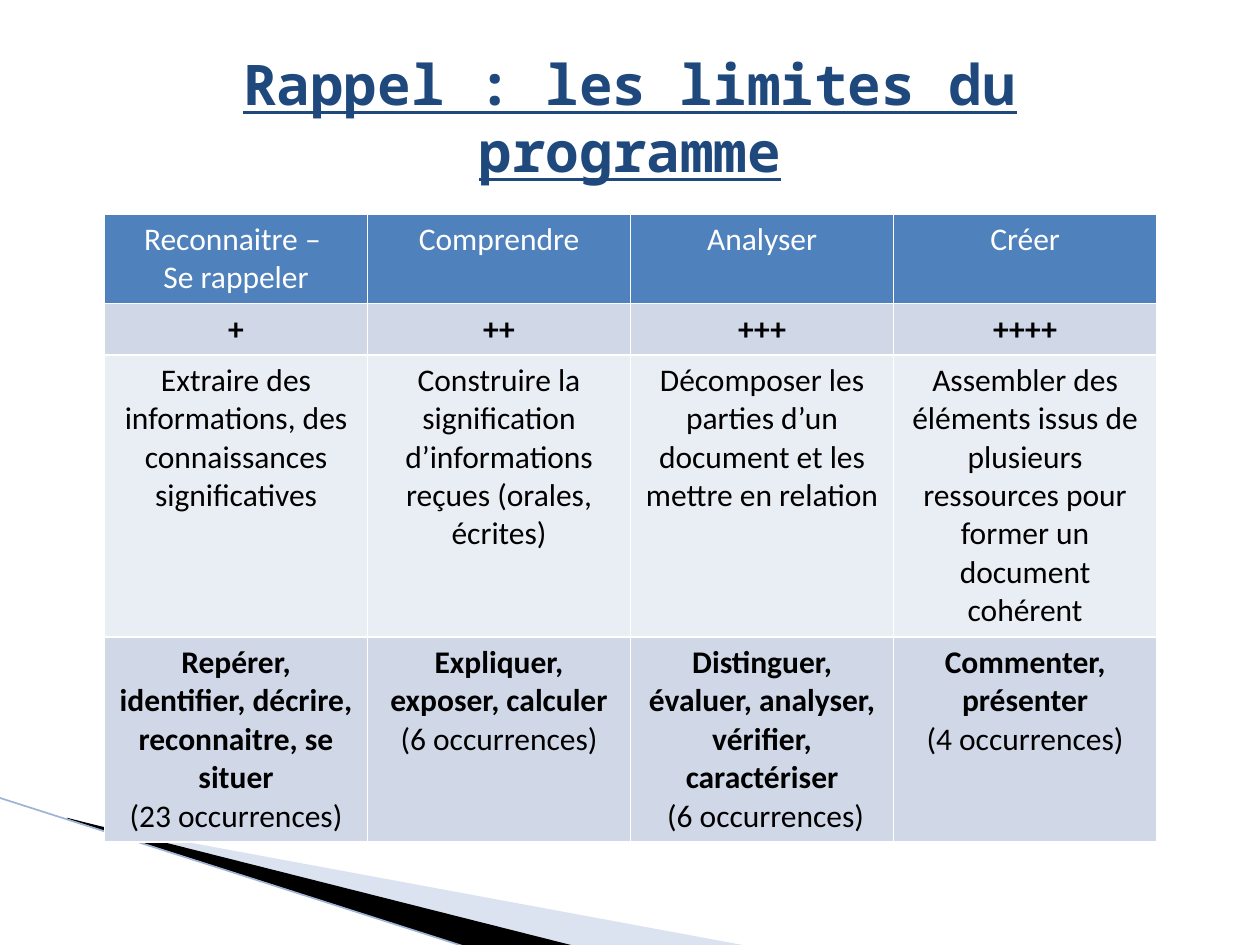
from lxml import etree
from pptx import Presentation
from pptx.dml.color import RGBColor
from pptx.enum import shapes, text
from pptx.oxml.ns import qn
from pptx.util import Inches, Pt

NAVY = RGBColor(0x1F, 0x49, 0x7D)
HEADER_BLUE = RGBColor(0x4F, 0x81, 0xBD)
BAND_DARK = RGBColor(0xD0, 0xD8, 0xE8)
BAND_LIGHT = RGBColor(0xE9, 0xED, 0xF4)
PALE_BLUE = RGBColor(0xA7, 0xB9, 0xDB)
LINE_BLUE = RGBColor(0x9E, 0xB3, 0xD6)
BLACK = RGBColor(0, 0, 0)
WHITE = RGBColor(0xFF, 0xFF, 0xFF)

deck = Presentation()
deck.slide_width, deck.slide_height = Inches(10), Inches(7.5)
page = deck.slides.add_slide(deck.slide_layouts[5])


def add_wedge(points, color):
    corners = [(Inches(x), Inches(y)) for x, y in points]
    builder = page.shapes.build_freeform(*corners[0], scale=1.0)
    builder.add_line_segments(corners[1:], close=True)
    wedge = builder.convert_to_shape()
    wedge.shadow.inherit = False
    wedge.fill.solid()
    wedge.fill.fore_color.rgb = color
    wedge.line.fill.background()
    return wedge


# Corner decoration
pale_wedge = add_wedge([(0.55, 6.51), (5.95, 7.51), (4.56, 7.51), (0.55, 6.5)], PALE_BLUE)
pale_color = pale_wedge.fill._xPr.find(qn("a:solidFill"))[0]
etree.SubElement(pale_color, qn("a:alpha"), val="40000")
add_wedge([(0.53, 6.49), (4.57, 7.51), (3.72, 7.52), (0.54, 6.5)], BLACK)

edge = page.shapes.add_connector(
    shapes.MSO_CONNECTOR.STRAIGHT,
    Inches(-0.01), Inches(6.33), Inches(3.71), Inches(7.52))
edge.line.color.rgb = LINE_BLUE
edge.line.width = Pt(0.95)
etree.SubElement(edge._element.spPr, qn("a:effectLst"))

# Title
title = page.shapes.title
title.left, title.top = Inches(0.5), Inches(0.3)
title.width, title.height = Inches(9), Inches(1.25)
title.text_frame.vertical_anchor = text.MSO_ANCHOR.MIDDLE
para = title.text_frame.paragraphs[0]
para.alignment = text.PP_ALIGN.CENTER
span = para.add_run()
span.text = "Rappel : les limites du programme"
span.font.name = "Noto Sans Mono"
span.font.size = Pt(32)
span.font.bold = span.font.underline = True
span.font.color.rgb = NAVY

# Each row: height, fill, text colour, bold flag of each paragraph, cells
ROWS = [
    (0.71, HEADER_BLUE, WHITE, (False, False),
     [["Reconnaitre – ", "Se rappeler"], ["Comprendre"], ["Analyser"], ["Créer"]]),
    (0.4, BAND_DARK, BLACK, (True,),
     [["+"], ["++"], ["+++"], ["++++"]]),
    (2.24, BAND_LIGHT, BLACK, (False,),
     [["Extraire des informations, des connaissances significatives"],
      ["Construire la signification d’informations reçues (orales, écrites)"],
      ["Décomposer les parties d’un document et les mettre en relation"],
      ["Assembler des éléments issus de plusieurs ressources pour former "
       "un document cohérent"]]),
    (1.62, BAND_DARK, BLACK, (True, False),
     [["Repérer, identifier, décrire, reconnaitre, se situer", "(23 occurrences)"],
      ["Expliquer, exposer, calculer", "(6 occurrences)"],
      ["Distinguer, évaluer, analyser, vérifier, caractériser", " (6 occurrences)"],
      ["Commenter, présenter", "(4 occurrences)"]]),
]

table = page.shapes.add_table(
    len(ROWS), 4, Inches(0.83), Inches(1.7), Inches(8.35),
    Inches(sum(row[0] for row in ROWS))).table

for row_index, (height, fill, color, bolds, cells) in enumerate(ROWS):
    table.rows[row_index].height = Inches(height)
    for column_index, lines in enumerate(cells):
        cell = table.cell(row_index, column_index)
        cell.fill.solid()
        cell.fill.fore_color.rgb = fill
        frame = cell.text_frame
        for line_index, (line, bold) in enumerate(zip(lines, bolds)):
            para = frame.add_paragraph() if line_index else frame.paragraphs[0]
            para.alignment = text.PP_ALIGN.CENTER
            span = para.add_run()
            span.text = line
            span.font.name = "Calibri"
            span.font.size = Pt(18)
            span.font.bold = bold
            span.font.color.rgb = color

deck.save("out.pptx")
